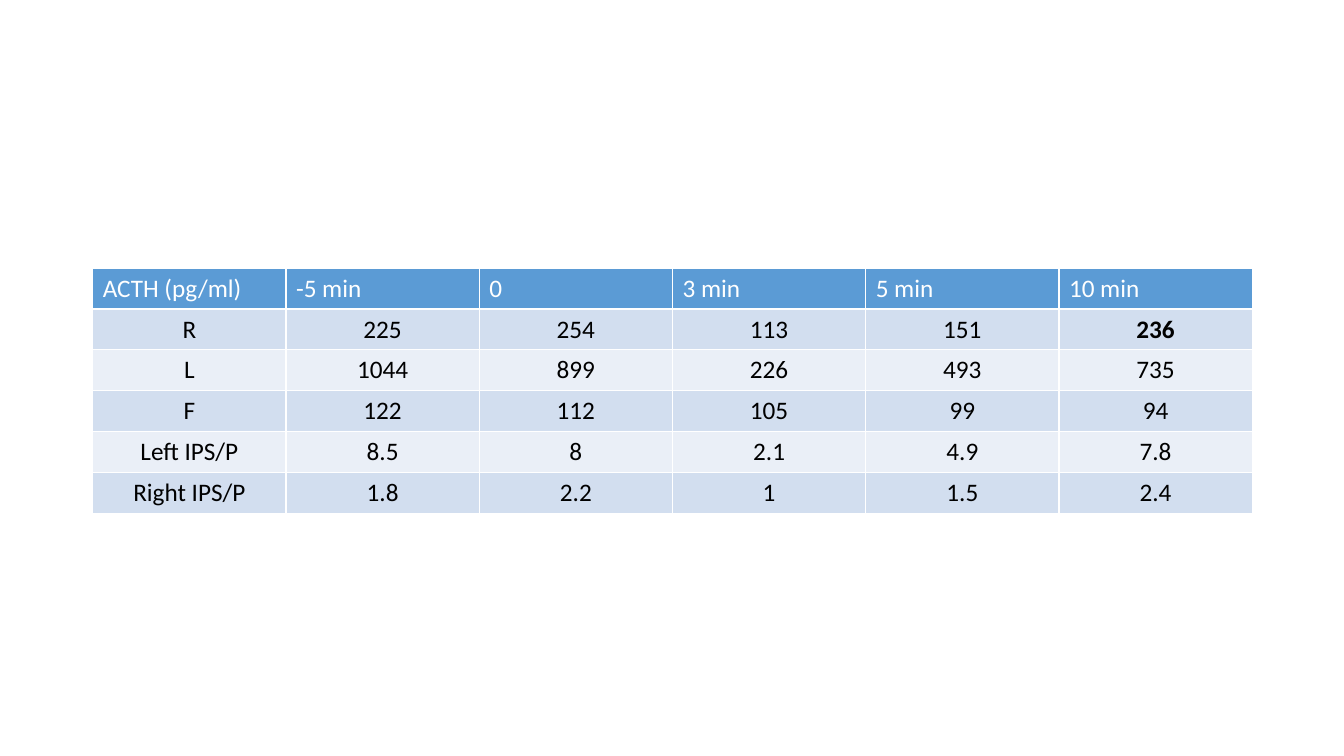
from pptx import Presentation
from pptx.dml.color import RGBColor as Rgb
from pptx.enum.text import PP_ALIGN as Align
from pptx.util import Inches, Pt

HUES = {"head": "5B9BD5", "odd": "D2DEEF", "even": "EAEFF7",
        "light": "FFFFFF", "dark": "000000"}

ROWS = [
    ["ACTH (pg/ml)", "-5 min", "0", "3 min", "5 min", "10 min"],
    ["R", "225", "254", "113", "151", "236"],
    ["L", "1044", "899", "226", "493", "735"],
    ["F", "122", "112", "105", "99", "94"],
    ["Left IPS/P", "8.5", "8", "2.1", "4.9", "7.8"],
    ["Right IPS/P", "1.8", "2.2", "1", "1.5", "2.4"],
]
BOLD = {(1, 5)}


class Page:
    def __init__(self, deck):
        self.slide = deck.slides.add_slide(deck.slide_layouts[6])
        self.face = "Calibri"
        self.size = Pt(18)

    def table(self, rows, left, top, width, height, bold):
        frame = self.slide.shapes.add_table(
            len(rows), len(rows[0]), Inches(left), Inches(top),
            Inches(width), Inches(height))
        for r, row in enumerate(rows):
            for c, text in enumerate(row):
                self.cell(frame.table.cell(r, c), text, r, (r, c) in bold)

    def cell(self, cell, text, row, bold):
        fill = "head" if row == 0 else "odd" if row % 2 else "even"
        cell.fill.solid()
        cell.fill.fore_color.rgb = Rgb.from_string(HUES[fill])
        cell.text = text
        para = cell.text_frame.paragraphs[0]
        para.alignment = Align.CENTER if row else Align.LEFT
        font = para.font
        font.name = self.face
        font.size = self.size
        font.bold = bold
        font.color.rgb = Rgb.from_string(HUES["dark" if row else "light"])


def main():
    deck = Presentation()
    deck.slide_width = Inches(13.33)
    deck.slide_height = Inches(7.5)
    Page(deck).table(ROWS, 0.92, 2.66, 11.5, 2.4, BOLD)
    deck.save("out.pptx")


if __name__ == "__main__":
    main()
